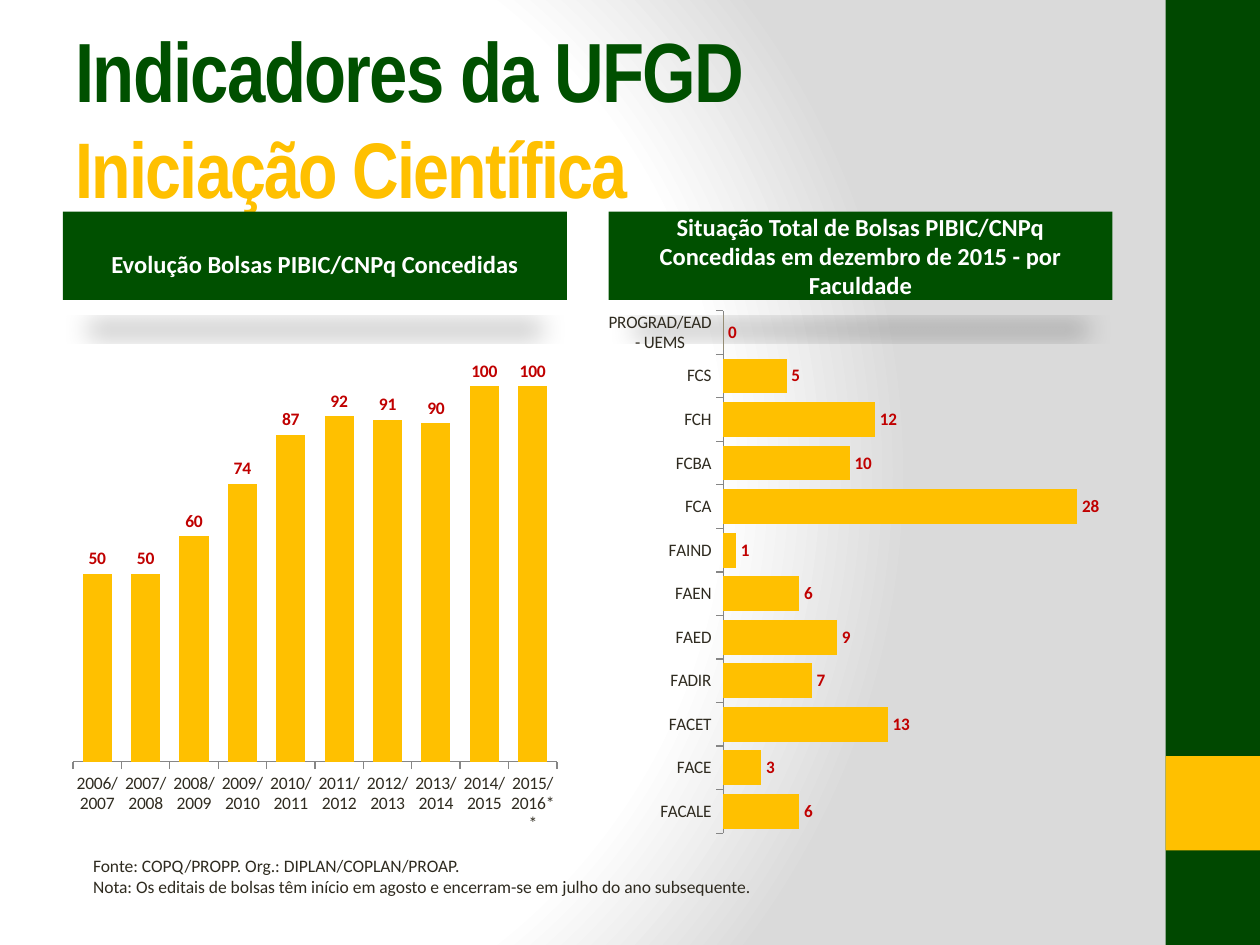
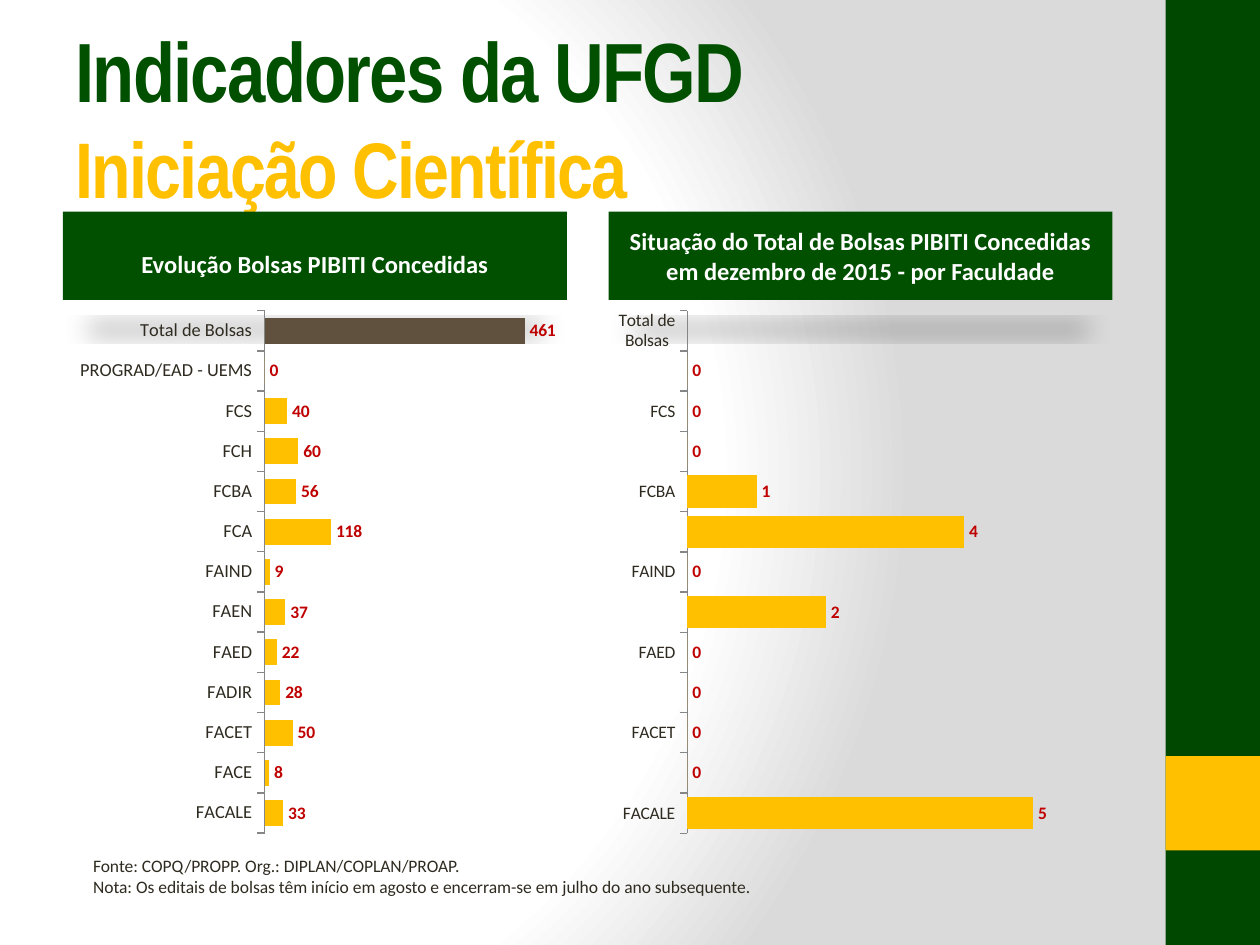
from lxml.etree import SubElement
from pptx import Presentation
from pptx.chart.data import CategoryChartData
from pptx.dml.color import RGBColor
from pptx.enum.chart import XL_CHART_TYPE, XL_LABEL_POSITION, XL_TICK_MARK
from pptx.enum.shapes import MSO_SHAPE
from pptx.enum.text import MSO_ANCHOR, MSO_AUTO_SIZE, PP_ALIGN
from pptx.oxml import parse_xml
from pptx.oxml.ns import nsdecls, qn
from pptx.util import Pt

PX = 9144
GREEN = RGBColor(0x00, 0x50, 0x00)
DARK_GREEN = RGBColor(0x00, 0x48, 0x00)
GOLD = RGBColor(0xFF, 0xC0, 0x00)
BROWN = RGBColor(0x5F, 0x51, 0x3E)
RED = RGBColor(0xC0, 0x00, 0x00)
INK = RGBColor(0x2F, 0x2B, 0x20)
GRAY = RGBColor(0x86, 0x86, 0x86)
WHITE = RGBColor(0xFF, 0xFF, 0xFF)

COLUMN = XL_CHART_TYPE.COLUMN_CLUSTERED
BAR = XL_CHART_TYPE.BAR_CLUSTERED

TITLE_LINES = [("Indicadores da UFGD", 48, GREEN), ("Iniciação Científica", 45, GOLD)]
NOTES = [
    "Fonte: COPQ/PROPP. Org.: DIPLAN/COPLAN/PROAP.",
    "Nota: Os editais de bolsas têm início em agosto e encerram-se em julho do ano subsequente.",
]
YEARS = [f"{year}/{year + 1}" for year in range(2006, 2015)] + ["2015/2016**"]
FACULTIES = ["FACALE", "FACE", "FACET", "FADIR", "FAED", "FAEN", "FAIND", "FCA",
             "FCBA", "FCH", "FCS", "PROGRAD/EAD - UEMS"]
FACULTIES_TOTAL = FACULTIES + ["Total de Bolsas"]

PAGES = [
    [
        dict(heading="Evolução Bolsas PIBIC/CNPq Concedidas", kind=COLUMN, categories=YEARS,
             values=[50, 50, 60, 74, 87, 92, 91, 90, 100, 100], gap=66, top=120),
        dict(heading="Situação Total de Bolsas PIBIC/CNPq Concedidas em dezembro de 2015 - por Faculdade",
             kind=BAR, categories=FACULTIES,
             values=[6, 3, 13, 7, 9, 6, 1, 28, 10, 12, 5, 0], gap=25, top=30),
    ],
    [
        dict(heading="Evolução Bolsas PIBITI Concedidas", kind=BAR, categories=FACULTIES_TOTAL,
             values=[33, 8, 50, 28, 22, 37, 9, 118, 56, 60, 40, 0, 461], gap=56, top=500,
             label_size=10.5, total_point=12, plot=dict(x=0.4, y=0.02, w=0.56, h=0.96)),
        dict(heading="Situação do Total de Bolsas PIBITI Concedidas em dezembro de 2015 - por Faculdade",
             kind=BAR, categories=FACULTIES_TOTAL,
             values=[5, 0, 0, 0, 0, 2, 0, 4, 1, 0, 0, 0, None], gap=25, top=6),
    ],
]

PANEL_LEFTS = (50, 483)
PANEL_WIDTH = 400
HEADING_TOP, HEADING_HEIGHT = 168, 70
CHART_TOP, CHART_HEIGHT = 238, 432
BANDS = [((925, 0, 75, 750), DARK_GREEN), ((925, 600, 75, 75), GOLD)]

BACKGROUND = f"""<a:gradFill {nsdecls('a')} rotWithShape="1"><a:gsLst>
<a:gs pos="0"><a:srgbClr val="FFFFFF"/></a:gs>
<a:gs pos="75000"><a:srgbClr val="FFFFFF"/></a:gs>
<a:gs pos="100000"><a:srgbClr val="DADADA"/></a:gs></a:gsLst>
<a:path path="circle"><a:fillToRect l="20000" t="50000" r="100000" b="50000"/></a:path>
</a:gradFill>"""
SHADOW = f"""<a:effectLst {nsdecls('a')}>
<a:outerShdw blurRad="190500" dist="152400" dir="5400000" sx="90000" sy="-19000" rotWithShape="0">
<a:srgbClr val="000000"><a:alpha val="25000"/></a:srgbClr></a:outerShdw></a:effectLst>"""


def scaled(*lengths):
    return [length * PX for length in lengths]


def set_font(font, size, color, bold=False, name="Calibri"):
    font.size, font.bold, font.name = Pt(size), bold, name
    font.color.rgb = color


def set_background(master):
    master.background.fill.solid()
    properties = next(master.element.iter(qn("p:bgPr")))
    properties.replace(properties[0], parse_xml(BACKGROUND))


def add_block(page, area, color):
    block = page.shapes.add_shape(MSO_SHAPE.RECTANGLE, *scaled(*area))
    block.shadow.inherit = False
    block.fill.solid()
    block.fill.fore_color.rgb = color
    block.line.fill.background()
    return block


def fill_title(title):
    title.left, title.top, title.width, title.height = scaled(50, 30, 833, 125)
    frame = title.text_frame
    frame.auto_size = MSO_AUTO_SIZE.NONE
    frame.vertical_anchor = MSO_ANCHOR.MIDDLE
    para = frame.paragraphs[0]
    para.alignment = PP_ALIGN.LEFT
    for index, (text, size, color) in enumerate(TITLE_LINES):
        if index:
            para.add_line_break()
        span = para.add_run()
        span.text = text
        set_font(span.font, size, color, True, "Arial Narrow")
        span._r.get_or_add_rPr().set("spc", "-100")


def add_heading(page, left, text, raised):
    box = add_block(page, (left, HEADING_TOP, PANEL_WIDTH, HEADING_HEIGHT), GREEN)
    properties = box._element.spPr
    properties.replace(properties.find(qn("a:effectLst")), parse_xml(SHADOW))
    frame = box.text_frame
    frame.word_wrap = True
    frame.vertical_anchor = MSO_ANCHOR.MIDDLE
    if raised:
        frame.vertical_anchor = MSO_ANCHOR.BOTTOM
        frame.margin_bottom = 17 * PX
    para = frame.paragraphs[0]
    para.text = text
    para.alignment = PP_ALIGN.CENTER
    set_font(para.font, 14, WHITE, True)


def set_plot_area(chart, plot):
    area = next(chart.element.iter(qn("c:plotArea"))) if hasattr(chart, "element") \
        else next(chart._chartSpace.iter(qn("c:plotArea")))
    layout = area.find(qn("c:layout"))
    if layout is None:
        layout = area.makeelement(qn("c:layout"))
        area.insert(0, layout)
    manual = SubElement(layout, qn("c:manualLayout"))
    settings = dict(layoutTarget="inner", xMode="edge", yMode="edge", **plot)
    for name, value in settings.items():
        SubElement(manual, qn(f"c:{name}")).set("val", str(value))


def add_panel_chart(page, left, panel):
    data = CategoryChartData()
    data.categories = panel["categories"]
    data.add_series("Series 1", panel["values"])
    area = scaled(left, CHART_TOP, PANEL_WIDTH, CHART_HEIGHT)
    chart = page.shapes.add_chart(panel["kind"], *area, data).chart
    chart.has_legend = chart.has_title = False
    set_font(chart.font, 10, INK)

    values = chart.value_axis
    values.has_major_gridlines = values.visible = False
    values.minimum_scale, values.maximum_scale = 0, panel["top"]
    categories = chart.category_axis
    categories.major_tick_mark = XL_TICK_MARK.OUTSIDE
    categories.format.line.color.rgb = GRAY
    set_font(categories.tick_labels.font, panel.get("label_size", 10), INK)

    plot = chart.plots[0]
    plot.gap_width = panel["gap"]
    plot.vary_by_categories = False
    series = plot.series[0]
    series.format.fill.solid()
    series.format.fill.fore_color.rgb = GOLD
    labels = series.data_labels
    labels.show_value = True
    labels.position = XL_LABEL_POSITION.OUTSIDE_END
    set_font(labels.font, 10, RED, True)
    if "total_point" in panel:
        fill = series.points[panel["total_point"]].format.fill
        fill.solid()
        fill.fore_color.rgb = BROWN
    if "plot" in panel:
        set_plot_area(chart, panel["plot"])


def add_notes(page):
    frame = page.shapes.add_textbox(*scaled(64, 674, 838, 44)).text_frame
    frame.word_wrap = True
    for index, note in enumerate(NOTES):
        para = frame.add_paragraph() if index else frame.paragraphs[0]
        para.text = note
        set_font(para.font, 10, INK)


def build_page(deck, panels):
    page = deck.slides.add_slide(deck.slide_layouts[5])
    for area, color in BANDS:
        add_block(page, area, color)
    fill_title(page.shapes.title)
    for index, (left, panel) in enumerate(zip(PANEL_LEFTS, panels)):
        add_heading(page, left, panel["heading"], raised=index == 0)
        add_panel_chart(page, left, panel)
    add_notes(page)


def main():
    deck = Presentation()
    deck.slide_width, deck.slide_height = scaled(1000, 750)
    set_background(deck.slide_master)
    for panels in PAGES:
        build_page(deck, panels)
    deck.save("out.pptx")


if __name__ == "__main__":
    main()
